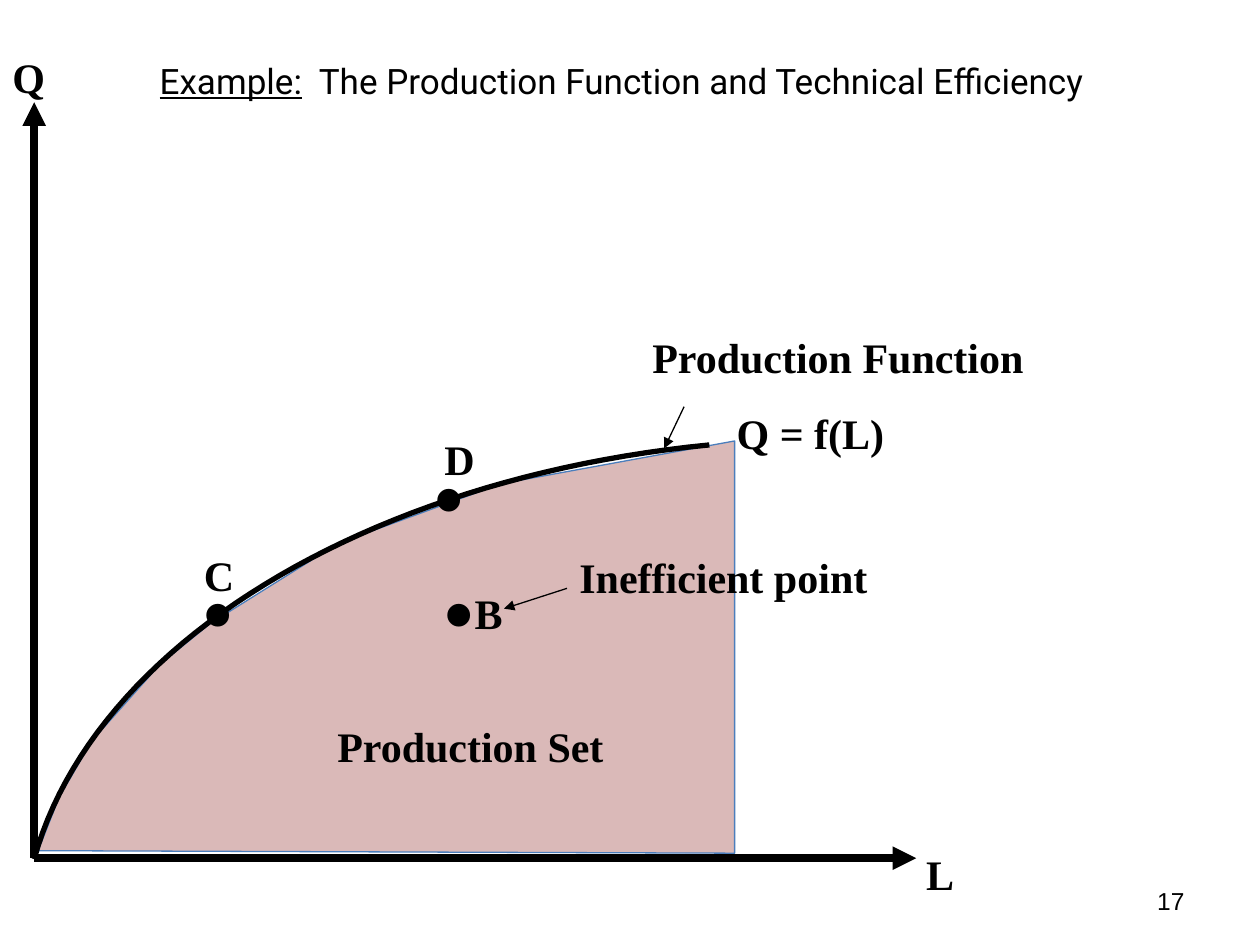
from lxml import etree
from pptx import Presentation
from pptx.dml.color import RGBColor
from pptx.enum import shapes, text
from pptx.oxml import ns
from pptx.util import Cm, Pt

BLACK = RGBColor(0x00, 0x00, 0x00)
ROSE = RGBColor(0x95, 0x37, 0x35)
BLUE = RGBColor(0x4B, 0x7E, 0xBC)
SERIF = "Times New Roman"


def add_text(x, y, w, h, runs, font, size, bold=False, wrap=False):
    tb = s.shapes.add_textbox(Cm(x), Cm(y), Cm(w), Cm(h))
    tf = tb.text_frame
    tf.word_wrap = wrap
    tf.auto_size = text.MSO_AUTO_SIZE.SHAPE_TO_FIT_TEXT
    for words, underline in runs:
        r = tf.paragraphs[0].add_run()
        r.text = words
        r.font.name = font
        r.font.size = Pt(size)
        r.font.bold = bold
        r.font.underline = underline
        r.font.color.rgb = BLACK
    return tf


def add_outline(points, color, width, close):
    start, *rest = [(Cm(x), Cm(y)) for x, y in points]
    fb = s.shapes.build_freeform(*start)
    fb.add_line_segments(rest, close=close)
    sp = fb.convert_to_shape()
    sp.shadow.inherit = False
    sp.line.color.rgb = color
    sp.line.width = Pt(width)
    return sp


prs = Presentation()
prs.slide_width = Cm(25.4)
prs.slide_height = Cm(19.05)
s = prs.slides.add_slide(prs.slide_layouts[6])

production_set = [
    (0.71, 17.15), (14.81, 17.2), (14.81, 8.89), (10.11, 9.75), (6.83, 10.95),
    (4.24, 12.57), (3.23, 13.39), (1.85, 14.94), (1.19, 16.08), (0.71, 17.3),
]
sp = add_outline(production_set, BLUE, 0.75, False)
sp.fill.solid()
sp.fill.fore_color.rgb = ROSE
color = sp.fill._xPr.find(".//" + ns.qn("a:srgbClr"))
etree.SubElement(color, ns.qn("a:alpha"), val="35000")

tf = add_text(18.21, 17.65, 5.92, 1.02, [("17", False)], "Arial", 14, wrap=True)
tf.auto_size = text.MSO_AUTO_SIZE.NONE
tf.vertical_anchor = text.MSO_ANCHOR.MIDDLE
tf.paragraphs[0].alignment = text.PP_ALIGN.RIGHT

title = [
    ("Example:", True),
    ("  The Production Function and Technical Efficiency", False),
]
add_text(2.97, 1.07, 21.59, 1.12, title, "Roboto", 20, wrap=True)

arrows = [
    (0.69, 17.3, 18.47, 17.3, 4.5),
    (0.69, 17.3, 0.69, 2.06, 4.5),
    (13.79, 8.2, 13.39, 9.04, 0.75),
    (11.43, 11.86, 10.16, 12.27, 0.75),
]
for x1, y1, x2, y2, width in arrows:
    c = s.shapes.add_connector(
        shapes.MSO_CONNECTOR.STRAIGHT, Cm(x1), Cm(y1), Cm(x2), Cm(y2))
    c.line.color.rgb = BLACK
    c.line.width = Pt(width)
    etree.SubElement(c.line._get_or_add_ln(), ns.qn("a:tailEnd"), type="triangle")
    etree.SubElement(c._element.spPr, ns.qn("a:effectLst"))

controls = [(0.69, 17.32), (1.88, 13.0), (7.37, 9.65), (14.3, 8.97)]
steps = 48
curve = []
for i in range(steps + 1):
    t = i / steps
    weights = ((1 - t) ** 3, 3 * t * (1 - t) ** 2, 3 * t ** 2 * (1 - t), t ** 3)
    curve.append([sum(w * p[k] for w, p in zip(weights, controls)) for k in (0, 1)])
sp = add_outline(curve, BLACK, 3, False)
sp.fill.background()

for x, y in [(8.71, 11.15), (3.86, 11.15), (8.51, 8.84)]:
    add_text(x, y, 1.09, 2.29, [("•", False)], SERIF, 48, bold=True)

labels = [
    ("Q = f(L)", 14.6, 8.1, 3.48),
    ("L", 18.42, 16.99, 1.07),
    ("Q", 0, 0.91, 1.37),
    ("C", 3.86, 10.95, 1.12),
    ("D", 8.71, 8.61, 1.12),
    ("B", 9.32, 11.71, 1.07),
    ("Production Set", 6.55, 14.4, 5.89),
    ("Inefficient point", 11.43, 11.0, 6.32),
    ("Production Function", 12.9, 6.55, 8.0),
]
for words, x, y, w in labels:
    add_text(x, y, w, 1.27, [(words, False)], SERIF, 24, bold=True)

prs.save("out.pptx")
